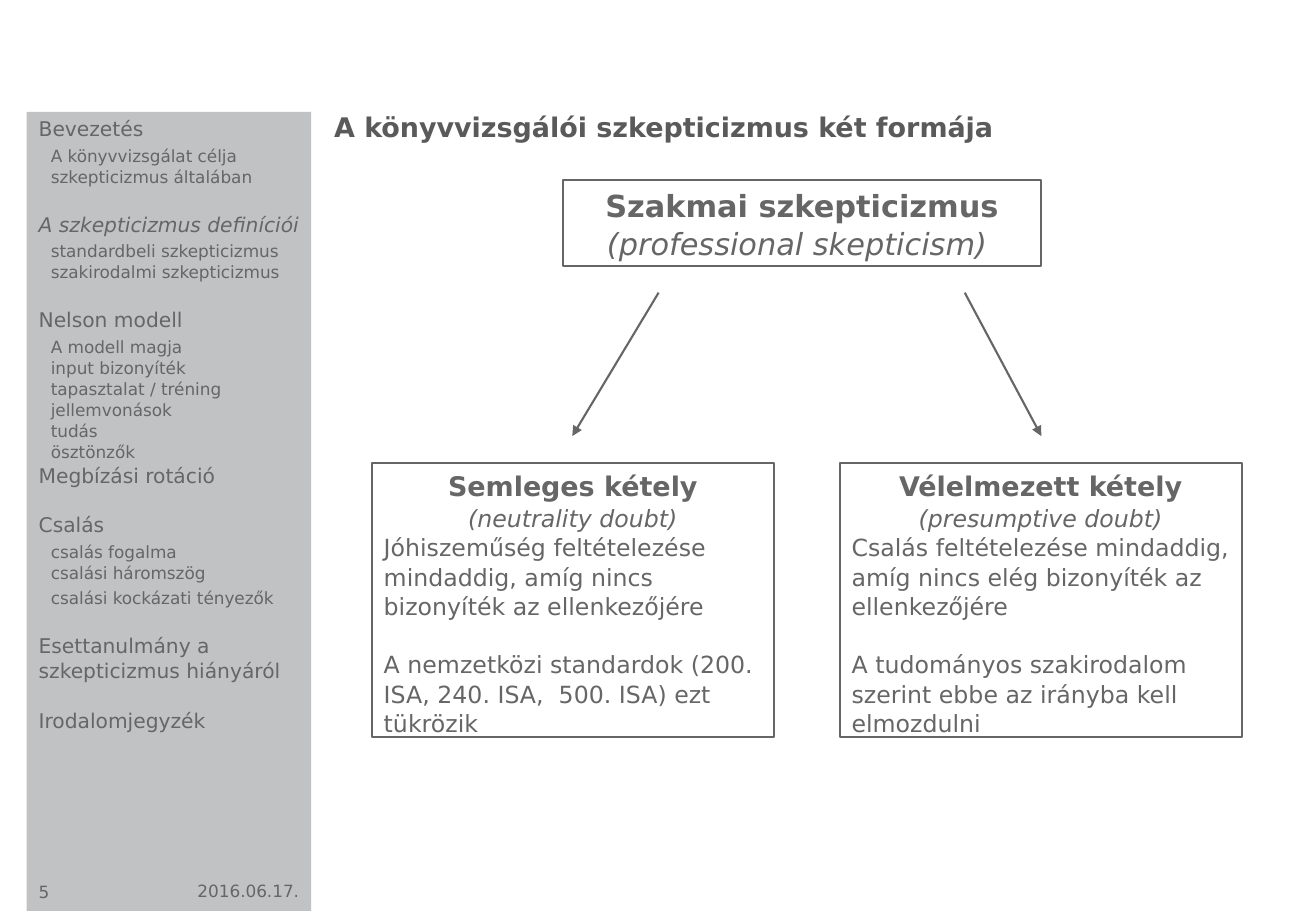
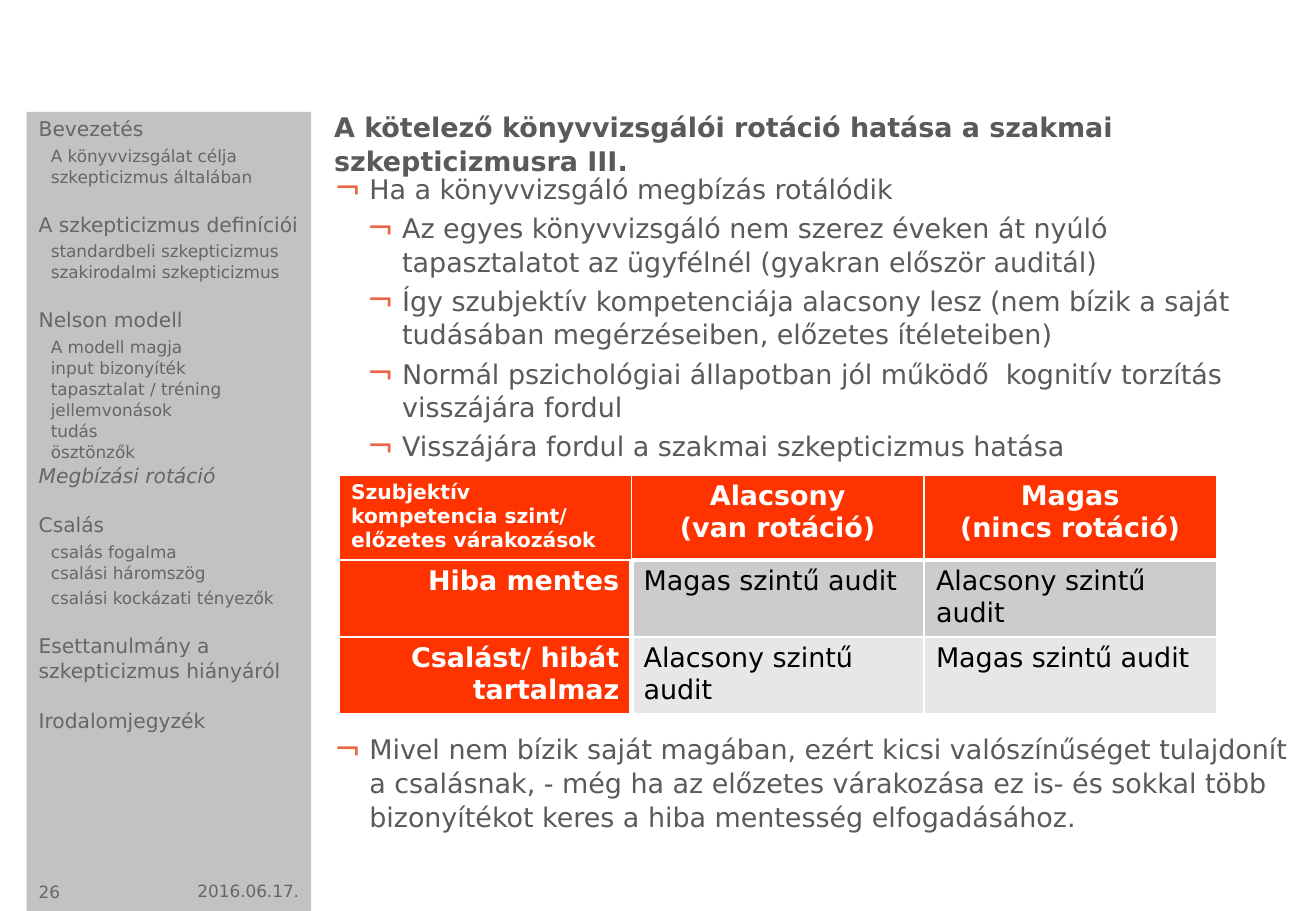
from lxml import etree
from pptx import Presentation
from pptx.dml.color import RGBColor
from pptx.enum.shapes import MSO_CONNECTOR, MSO_SHAPE
from pptx.enum.text import MSO_ANCHOR, MSO_AUTO_SIZE, PP_ALIGN as AL
from pptx.oxml.ns import qn
from pptx.util import Inches, Pt

GREY = RGBColor(0x66, 0x66, 0x66)
DARK = RGBColor(0x5A, 0x5A, 0x5A)
PANEL = RGBColor(0xC1, 0xC2, 0xC4)
BULLET = RGBColor(0xEA, 0x66, 0x45)
RED = RGBColor(0xFF, 0x33, 0x00)
BAND_DARK = RGBColor(0xCC, 0xCC, 0xCC)
BAND_LIGHT = RGBColor(0xE7, 0xE7, 0xE7)
WHITE = RGBColor(0xFF, 0xFF, 0xFF)
BLACK = RGBColor(0, 0, 0)

FONT = "DejaVu Sans"
LEADING = 1.04
DATE = "2016.06.17."
TITLE_ONLY, TITLE_BODY = 5, 1

# Heading, space before it in points, entries below it
MENU = [
    ("Bevezetés", 0, ["A könyvvizsgálat célja", "szkepticizmus általában"]),
    ("A szkepticizmus definíciói", 14.5,
     ["standardbeli szkepticizmus", "szakirodalmi szkepticizmus"]),
    ("Nelson modell", 14.5,
     ["A modell magja", "input bizonyíték", "tapasztalat / tréning",
      "jellemvonások", "tudás", "ösztönzők"]),
    ("Megbízási rotáció", 0, []),
    ("Csalás", 14.5,
     ["csalás fogalma", "csalási háromszög", "csalási kockázati tényezők"]),
    ("Esettanulmány a szkepticizmus hiányáról", 14.5, []),
    ("Irodalomjegyzék", 14.5, []),
]
SPACED_ENTRIES = {entries[0] for _, _, entries in MENU if entries}
SPACED_ENTRIES.add("csalási kockázati tényezők")


def write(tf, text, size=14, color=GREY, bold=False, italic=False, align=AL.LEFT,
          before=0, leading=LEADING, left=0, hang=0, level=0, bullet=None):
    """Append one formatted paragraph, filling the first one if it is empty."""
    first = tf.paragraphs[0]
    p = tf.add_paragraph() if first.runs else first
    p.alignment, p.level, p.line_spacing = align, level, leading
    p.space_before, p.space_after = Pt(before), Pt(0)
    pPr = p._p.get_or_add_pPr()
    pPr.set("marL", str(Inches(left)))
    pPr.set("indent", str(Inches(-hang)))
    if bullet:
        clr = etree.SubElement(pPr, qn("a:buClr"))
        etree.SubElement(clr, qn("a:srgbClr"), val=str(BULLET))
        etree.SubElement(pPr, qn("a:buSzPct"), val="120000")
        etree.SubElement(pPr, qn("a:buFont"), typeface=FONT)
        etree.SubElement(pPr, qn("a:buChar"), char=bullet)
    r = p.add_run()
    r.text = text
    f = r.font
    f.name, f.size, f.bold, f.italic = FONT, Pt(size), bold, italic
    f.color.rgb = color


def set_border(cell, side, width):
    ln = etree.SubElement(cell._tc.get_or_add_tcPr(), qn("a:ln" + side),
                          w=str(Pt(width)))
    fill = etree.SubElement(ln, qn("a:solidFill"))
    etree.SubElement(fill, qn("a:srgbClr"), val=str(WHITE))


class Deck:
    """Holds the style and the current slide; lengths are percent of the slide."""

    def __init__(self):
        self.prs = Presentation()
        self.prs.slide_width, self.prs.slide_height = Inches(10.83), Inches(7.5)
        self.slide = None

    def x(self, share):
        return round(self.prs.slide_width * share / 100)

    def y(self, share):
        return round(self.prs.slide_height * share / 100)

    def area(self, left, top, width, height):
        return self.x(left), self.y(top), self.x(width), self.y(height)

    def new_slide(self, layout, title, number, current):
        self.slide = self.prs.slides.add_slide(self.prs.slide_layouts[layout])
        self.rect(2.03, 12.27, 21.61, 87.73, fill=PANEL)
        write(self.text(12.83, 96, 10.8, 3.6, MSO_ANCHOR.BOTTOM), DATE,
              size=10, align=AL.RIGHT)
        write(self.text(2.03, 96, 7.29, 3.6), str(number), size=10)
        tf = self.placeholder(self.slide.shapes.title, 25.39, 12, 72.58, 3.6)
        write(tf, title, size=16, color=DARK, bold=True)
        self.menu(current)

    def placeholder(self, sp, *area):
        sp.left, sp.top, sp.width, sp.height = self.area(*area)
        tf = sp.text_frame
        tf.auto_size, tf.word_wrap = MSO_AUTO_SIZE.NONE, True
        tf.vertical_anchor = MSO_ANCHOR.TOP
        tf.margin_left = tf.margin_right = tf.margin_top = tf.margin_bottom = 0
        return tf

    def text(self, left, top, width, height, anchor=MSO_ANCHOR.TOP):
        sp = self.slide.shapes.add_textbox(*self.area(left, top, width, height))
        tf = sp.text_frame
        tf.word_wrap, tf.vertical_anchor = True, anchor
        return tf

    def rect(self, left, top, width, height, fill=None, line=None):
        sp = self.slide.shapes.add_shape(
            MSO_SHAPE.RECTANGLE, *self.area(left, top, width, height))
        sp.shadow.inherit = False
        if fill is None:
            sp.fill.background()
        else:
            sp.fill.solid()
            sp.fill.fore_color.rgb = fill
        if line is None:
            sp.line.fill.background()
        else:
            sp.line.color.rgb, sp.line.width = line, Pt(1.25)
        tf = sp.text_frame
        tf.word_wrap, tf.vertical_anchor = True, MSO_ANCHOR.TOP
        return tf

    def arrow(self, x1, y1, x2, y2):
        cn = self.slide.shapes.add_connector(
            MSO_CONNECTOR.STRAIGHT, self.x(x1), self.y(y1), self.x(x2), self.y(y2))
        cn.line.color.rgb, cn.line.width = GREY, Pt(1.25)
        etree.SubElement(cn.line._get_or_add_ln(), qn("a:tailEnd"), type="triangle")
        etree.SubElement(cn._element.spPr, qn("a:effectLst"))

    def menu(self, current):
        tf = self.text(2.03, 12, 22.25, 84.13)
        for heading, gap, entries in MENU:
            write(tf, heading, size=12, italic=heading == current, before=gap)
            for entry in entries:
                spaced = entry in SPACED_ENTRIES
                write(tf, entry, size=10, left=0.1, before=2.3 if spaced else 0)

    def bullets(self, items):
        """Items are (level, space before, text)."""
        tf = self.placeholder(self.slide.placeholders[1], 25.39, 18.8, 72.58, 72)
        for level, before, text in items:
            write(tf, text, size=16, color=DARK, before=before, level=level,
                  left=(0.29, 0.56)[level], hang=0.29, bullet="¬")

    def table(self, left, top, width, heights, rows):
        n = len(rows[0])
        tbl = self.slide.shapes.add_table(
            len(rows), n, *self.area(left, top, width, sum(heights))).table
        tbl.first_row = tbl.horz_banding = False
        for col in tbl.columns:
            col.width = self.x(width / n)
        for i, row in enumerate(rows):
            tbl.rows[i].height = self.y(heights[i])
            for j, text in enumerate(row):
                self.cell(tbl.cell(i, j), i, j, text)

    def cell(self, cell, i, j, text):
        heavy = {"L": i > 0 and j == 1, "R": i > 0 and j == 0,
                 "T": i == 1 and j > 0, "B": i == 0 and j > 0}
        for side, is_heavy in heavy.items():
            set_border(cell, side, 3 if is_heavy else 1)
        header = i == 0 or j == 0
        cell.fill.solid()
        cell.fill.fore_color.rgb = RED if header else (BAND_DARK, BAND_LIGHT)[i - 1]
        align = AL.LEFT
        if header and i != j:
            align = AL.CENTER if i == 0 else AL.RIGHT
        for line in text.split("\n"):
            write(cell.text_frame, line, size=12 if i == j == 0 else 16, bold=header,
                  color=WHITE if header else BLACK, align=align, leading=1)


def forms_slide(deck):
    deck.new_slide(TITLE_ONLY, "A könyvvizsgálói szkepticizmus két formája", 5,
                   "A szkepticizmus definíciói")
    tf = deck.rect(42.75, 19.73, 36.38, 9.47, line=GREY)
    write(tf, "Szakmai szkepticizmus", size=18, bold=True, align=AL.CENTER)
    write(tf, "(professional skepticism) ", size=18, italic=True, align=AL.CENTER)
    deck.arrow(50.05, 32.13, 43.49, 47.87)
    deck.arrow(73.31, 32.13, 79.13, 47.87)
    doubts = [
        (28.25, "Semleges kétely", "(neutrality doubt)",
         "Jóhiszeműség feltételezése mindaddig, amíg nincs bizonyíték az ellenkezőjére",
         "A nemzetközi standardok (200. ISA, 240. ISA,  500. ISA) ezt tükrözik"),
        (63.8, "Vélelmezett kétely", "(presumptive doubt)",
         "Csalás feltételezése mindaddig, amíg nincs elég bizonyíték az ellenkezőjére",
         "A tudományos szakirodalom szerint ebbe az irányba kell elmozdulni"),
    ]
    for left, name, english, meaning, source in doubts:
        tf = deck.rect(left, 50.8, 30.56, 30.13, line=GREY)
        write(tf, name, size=16, bold=True, align=AL.CENTER)
        write(tf, english, italic=True, align=AL.CENTER)
        write(tf, meaning)
        write(tf, source, before=17)


def rotation_slide(deck):
    deck.new_slide(
        TITLE_BODY,
        "A kötelező könyvvizsgálói rotáció hatása a szakmai szkepticizmusra III.",
        26, "Megbízási rotáció")
    deck.bullets([
        (0, 0, "Ha a könyvvizsgáló megbízás rotálódik"),
        (1, 3.2, "Az egyes könyvvizsgáló nem szerez éveken át nyúló tapasztalatot "
                 "az ügyfélnél (gyakran először auditál)"),
        (1, 3.2, "Így szubjektív kompetenciája alacsony lesz (nem bízik a saját "
                 "tudásában megérzéseiben, előzetes ítéleteiben)"),
        (1, 3.2, "Normál pszichológiai állapotban jól működő  kognitív torzítás "
                 "visszájára fordul"),
        (1, 3.2, "Visszájára fordul a szakmai szkepticizmus hatása"),
        (0, 159.6, "Mivel nem bízik saját magában, ezért kicsi valószínűséget "
                   "tulajdonít a csalásnak, - még ha az előzetes várakozása ez is- és "
                   "sokkal több bizonyítékot keres a hiba mentesség elfogadásához."),
    ])
    deck.table(25.76, 52.13, 66.67, [9.05, 8.2, 8.2], [
        ["Szubjektív kompetencia szint/ előzetes várakozások",
         "Alacsony\n(van rotáció)", "Magas\n(nincs rotáció)"],
        ["Hiba mentes", "Magas szintű audit", "Alacsony szintű audit"],
        ["Csalást/ hibát tartalmaz", "Alacsony szintű audit", "Magas szintű audit"],
    ])


def main():
    deck = Deck()
    forms_slide(deck)
    rotation_slide(deck)
    deck.prs.save("out.pptx")


if __name__ == "__main__":
    main()
